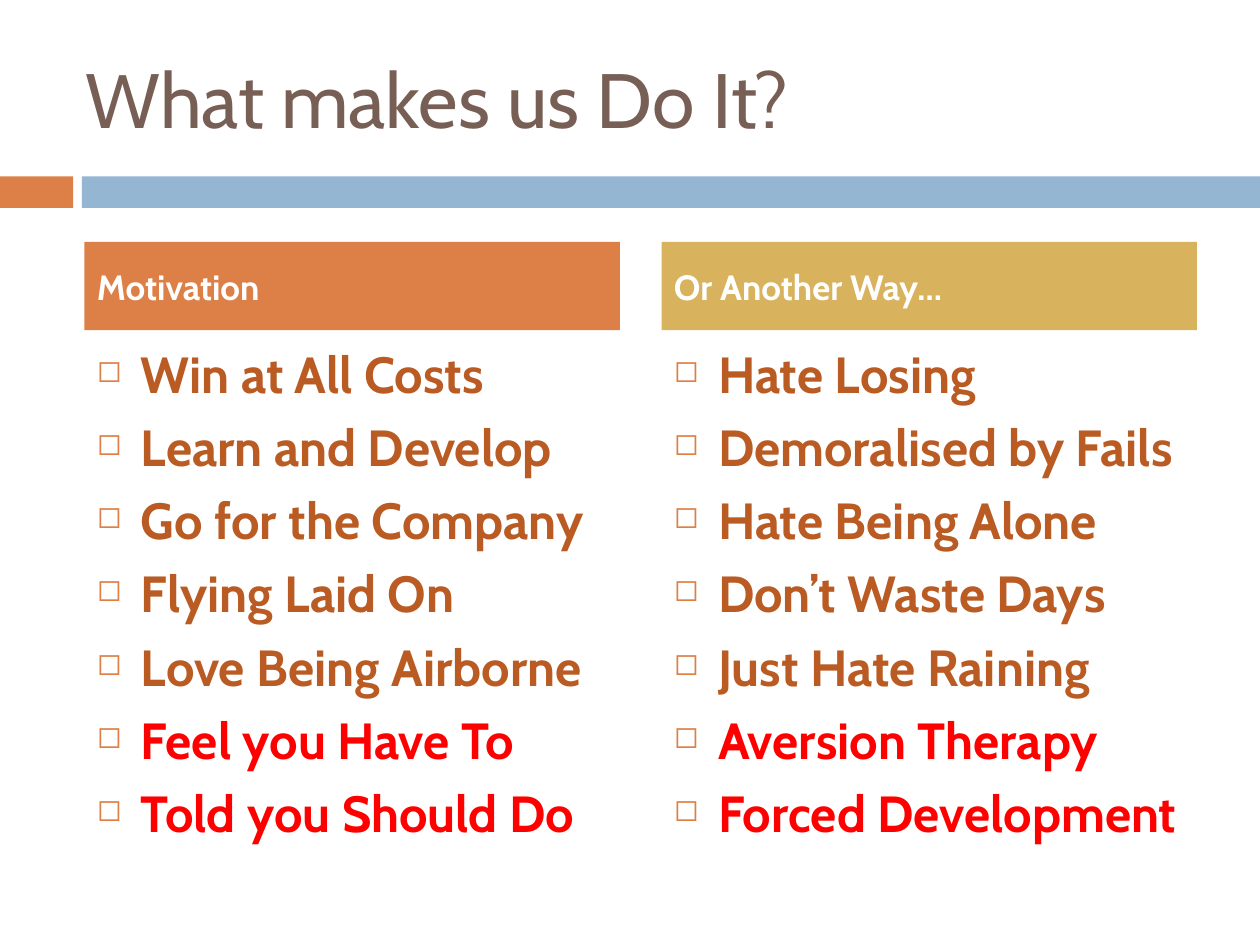
from dataclasses import dataclass

from lxml import etree
from pptx import Presentation
from pptx.dml.color import RGBColor
from pptx.enum.shapes import MSO_SHAPE
from pptx.enum.text import MSO_ANCHOR, PP_ALIGN
from pptx.oxml.ns import qn
from pptx.util import Inches, Pt

RECT = MSO_SHAPE.RECTANGLE
TOP, MIDDLE = MSO_ANCHOR.TOP, MSO_ANCHOR.MIDDLE
LEFT = PP_ALIGN.LEFT


@dataclass(frozen=True)
class Theme:
    font: str = "Cabin"
    title: str = "775F55"
    orange: str = "DD8047"
    blue: str = "94B6D2"
    gold: str = "D8B25C"
    item: str = "B95B22"
    alert: str = "FF0000"
    white: str = "FFFFFF"
    title_size: int = 44
    heading_size: int = 20
    item_size: int = 29
    space_before: int = 7
    indent: float = 0.35


@dataclass(frozen=True)
class Box:
    left: float
    top: float
    width: float
    height: float

    def emu(self):
        return [Inches(v) for v in (self.left, self.top, self.width, self.height)]


@dataclass(frozen=True)
class Column:
    heading: str
    fill: str
    items: tuple[str, ...]
    alerts: tuple[str, ...]


THEME = Theme()
WIDTH, HEIGHT = 10, 7.5
GRID_LEFT, COLUMN_WIDTH, GUTTER = 0.67, 4.25, 0.33
HEADING_TOP, HEADING_HEIGHT = 1.92, 0.7
LIST_TOP, LIST_HEIGHT = 2.67, 3.92
BAND_TOP, BAND_HEIGHT = 1.4, 0.25
BAND_SPLIT, BAND_GAP = 0.58, 0.07

COLUMNS = (
    Column("Motivation", THEME.orange,
           ("Win at All Costs", "Learn and Develop", "Go for the Company",
            "Flying Laid On", "Love Being Airborne"),
           ("Feel you Have To", "Told you Should Do")),
    Column("Or Another Way…", THEME.gold,
           ("Hate Losing", "Demoralised by Fails", "Hate Being Alone",
            "Don’t Waste Days", "Just Hate Raining"),
           ("Aversion Therapy", "Forced Development")),
)


def add_block(slide, box: Box, color: str):
    sp = slide.shapes.add_shape(RECT, *box.emu())
    sp.shadow.inherit = False
    sp.fill.solid()
    sp.fill.fore_color.rgb = RGBColor.from_string(color)
    sp.line.fill.background()
    return sp


def add_text(slide, box: Box, anchor):
    tf = slide.shapes.add_textbox(*box.emu()).text_frame
    tf.word_wrap = True
    tf.vertical_anchor = anchor
    return tf


def write(p, text: str, size: int, color: str, bold: bool = False, before: int = 0):
    p.alignment = LEFT
    p.space_before = Pt(before)
    r = p.add_run()
    r.text = text
    for name, value in {"name": THEME.font, "size": Pt(size), "bold": bold}.items():
        setattr(r.font, name, value)
    r.font.color.rgb = RGBColor.from_string(color)


def add_bullet(p):
    """Give the paragraph a small hollow square with a hanging indent."""
    pPr = p._p.get_or_add_pPr()
    indent = Inches(THEME.indent)
    pPr.set("marL", str(indent))
    pPr.set("indent", str(-indent))
    color = etree.SubElement(pPr, qn("a:buClr"))
    etree.SubElement(color, qn("a:srgbClr"), val=THEME.orange)
    etree.SubElement(pPr, qn("a:buSzPct"), val="60000")
    etree.SubElement(pPr, qn("a:buChar"), char="◻")


def add_column(slide, index: int, column: Column):
    left = GRID_LEFT + index * (COLUMN_WIDTH + GUTTER)
    tf = add_text(slide, Box(left, LIST_TOP, COLUMN_WIDTH, LIST_HEIGHT), TOP)
    lines = [(text, THEME.item) for text in column.items]
    lines += [(text, THEME.alert) for text in column.alerts]
    for i, (text, color) in enumerate(lines):
        p = tf.add_paragraph() if i else tf.paragraphs[0]
        write(p, text, THEME.item_size, color, True, THEME.space_before)
        add_bullet(p)

    sp = add_block(slide, Box(left, HEADING_TOP, COLUMN_WIDTH, HEADING_HEIGHT), column.fill)
    sp.text_frame.vertical_anchor = MIDDLE
    write(sp.text_frame.paragraphs[0], column.heading, THEME.heading_size,
          THEME.white, True, THEME.space_before)


def main():
    prs = Presentation()
    prs.slide_width, prs.slide_height = Inches(WIDTH), Inches(HEIGHT)
    slide = prs.slides.add_slide(prs.slide_layouts[6])

    band_left = BAND_SPLIT + BAND_GAP
    add_block(slide, Box(0, BAND_TOP, BAND_SPLIT, BAND_HEIGHT), THEME.orange)
    add_block(slide, Box(band_left, BAND_TOP, WIDTH - band_left, BAND_HEIGHT), THEME.blue)

    tf = add_text(slide, Box(BAND_SPLIT, 0.3, 8.92, 0.95), MIDDLE)
    write(tf.paragraphs[0], "What makes us Do It?", THEME.title_size, THEME.title)

    for index, column in enumerate(COLUMNS):
        add_column(slide, index, column)
    prs.save("out.pptx")


if __name__ == "__main__":
    main()
